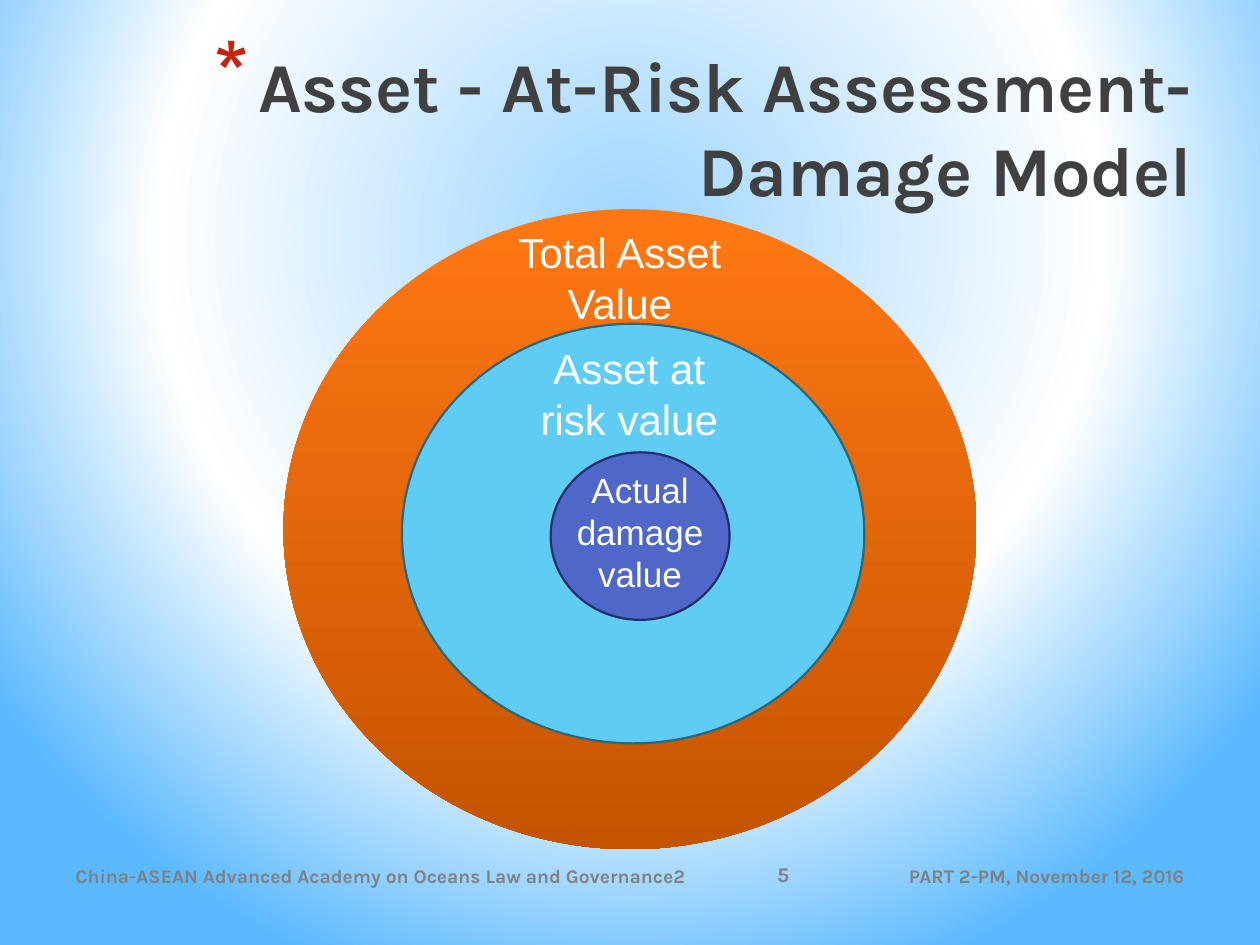
import typing
import pptx
import pptx.util
import pptx.dml.color
import pptx.enum.shapes
import pptx.enum.text
import pptx.oxml
import pptx.oxml.ns

Inches = pptx.util.Inches
Align = pptx.enum.text.PP_ALIGN
Anchor = pptx.enum.text.MSO_ANCHOR
NS = pptx.oxml.ns.nsdecls("a")


class Box(typing.NamedTuple):
    left: float
    top: float
    width: float
    height: float

    def place(self) -> list:
        return [Inches(size) for size in self]


class Ring(typing.NamedTuple):
    box: Box
    fill: tuple
    line: str
    label: str
    area: Box
    size: int


class Foot(typing.NamedTuple):
    text: str
    box: Box
    size: int
    align: Align


def color(code: str):
    return pptx.dml.color.RGBColor.from_string(code)


def write(slide, text: str, box: Box, *, size: int, font: str, ink: str,
          bold=False, align=Align.CENTER, anchor=Anchor.TOP, bullet=""):
    frame = slide.shapes.add_textbox(*box.place()).text_frame
    frame.word_wrap = True
    frame.vertical_anchor = anchor
    para = frame.paragraphs[0]
    para.alignment = align
    if bullet:
        mark(para, bullet)
    run = para.add_run()
    run.text = text
    run.font.name = font
    run.font.size = pptx.util.Pt(size)
    run.font.bold = bold
    run.font.color.rgb = color(ink)


def mark(para, code: str):
    """Hang a large coloured asterisk before the paragraph."""
    props = para._p.get_or_add_pPr()
    props.set("marL", str(Inches(0.35)))
    props.set("indent", str(Inches(-0.35)))
    for part in (f'<a:buClr {NS}><a:srgbClr val="{code}"/></a:buClr>',
                 f'<a:buSzPct {NS} val="128000"/>',
                 f'<a:buChar {NS} char="*"/>'):
        props.append(pptx.oxml.parse_xml(part))


def glow(slide, stops: list):
    """Fill the background with a circular gradient."""
    slide.background.fill.gradient()
    old = slide.element.xpath(".//p:bgPr/a:gradFill")[0]
    marks = "".join(f'<a:gs pos="{pos * 1000}"><a:srgbClr val="{code}"/></a:gs>'
                    for pos, code in stops)
    new = pptx.oxml.parse_xml(
        f'<a:gradFill {NS} rotWithShape="1"><a:gsLst>{marks}</a:gsLst>'
        '<a:path path="circle"><a:fillToRect l="20000" t="10000" r="20000" b="60000"/>'
        '</a:path></a:gradFill>')
    old.getparent().replace(old, new)


def draw(slide, ring: Ring):
    oval = slide.shapes.add_shape(pptx.enum.shapes.MSO_SHAPE.OVAL, *ring.box.place())
    oval.shadow.inherit = False
    if len(ring.fill) > 1:
        oval.fill.gradient()
        oval.fill.gradient_angle = 270
        for stop, code in zip(oval.fill.gradient_stops, ring.fill):
            stop.color.rgb = color(code)
    else:
        oval.fill.solid()
        oval.fill.fore_color.rgb = color(ring.fill[0])
    if ring.line:
        oval.line.color.rgb = color(ring.line)
        oval.line.width = pptx.util.Pt(1.25)
    else:
        oval.line.fill.background()


RINGS = [
    Ring(Box(2.25, 1.66, 5.5, 5.08), ("FF7813", "C45400"), "",
         "Total Asset Value", Box(3.92, 1.75, 2, 0.91), 24),
    Ring(Box(3.19, 2.57, 3.67, 3.33), ("5ECCF3",), "256880",
         "Asset at risk value", Box(4.08, 2.67, 1.83, 0.91), 24),
    Ring(Box(4.37, 3.59, 1.42, 1.33), ("4E67C8",), "1F2E69",
         "Actual damage value", Box(4.29, 3.67, 1.58, 1.11), 20),
]
FEET = [
    Foot("PART 2-PM, November 12, 2016", Box(6.75, 6.75, 2.75, 0.4), 11, Align.RIGHT),
    Foot("China-ASEAN Advanced Academy on Oceans Law and Governance2",
         Box(0.5, 6.75, 5.29, 0.4), 11, Align.LEFT),
    Foot("5", Box(5.87, 6.74, 0.69, 0.4), 12, Align.CENTER),
]


def main():
    deck = pptx.Presentation()
    deck.slide_width, deck.slide_height = Inches(10), Inches(7.5)
    slide = deck.slides.add_slide(deck.slide_layouts[6])
    glow(slide, [(0, "9ED5FF"), (60, "FFFFFF"), (100, "5BB9FF")])

    # Nested ovals, then their labels
    for ring in RINGS:
        draw(slide, ring)
    for ring in RINGS:
        write(slide, ring.label, ring.area, size=ring.size, font="Arial", ink="FFFFFF")

    # Footer
    for foot in FEET:
        write(slide, foot.text, foot.box, size=foot.size, font="Karla", ink="808080",
              bold=True, align=foot.align, anchor=Anchor.MIDDLE)

    # Title
    write(slide, "Asset - At-Risk Assessment- Damage Model", Box(0.35, 0.29, 9.21, 1.25),
          size=40, font="Karla", ink="404040", bold=True, align=Align.RIGHT,
          bullet="C3260C")
    deck.save("out.pptx")


if __name__ == "__main__":
    main()
